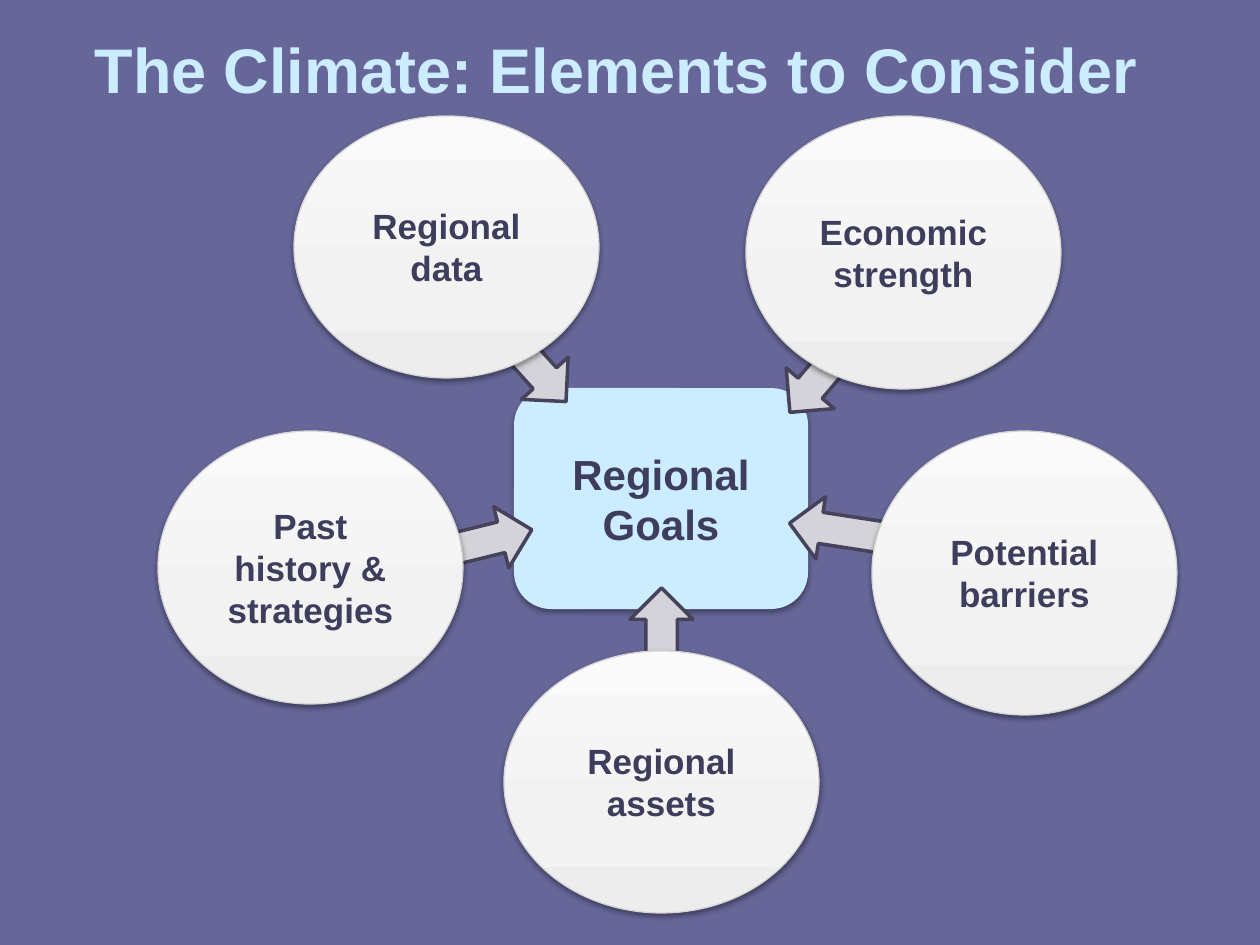
from copy import deepcopy
from dataclasses import dataclass

from lxml import etree
from pptx import Presentation
from pptx.dml.color import RGBColor
from pptx.enum.shapes import MSO_SHAPE
from pptx.enum.text import MSO_ANCHOR, PP_ALIGN
from pptx.oxml.ns import qn
from pptx.util import Emu, Pt

OVAL = MSO_SHAPE.OVAL
ROUND = MSO_SHAPE.ROUNDED_RECTANGLE
ARROW = MSO_SHAPE.LEFT_ARROW
CENTER = PP_ALIGN.CENTER
MIDDLE = MSO_ANCHOR.MIDDLE
SCALE = 914400 / 126  # EMU in one px


@dataclass(frozen=True)
class Theme:
    font: str = "Arial"
    back: str = "666699"
    light: str = "CCECFF"
    ink: str = "3E3E5C"
    arrow: str = "D3D3D9"
    edge: str = "47425B"
    rim: str = "D5D5D5"
    stops: tuple = ((0, "EDEDED"), (0.35, "F2F2F2"), (1, "FAFAFA"))
    title: int = 36
    goal: int = 24
    body: int = 20


def rgb(code):
    return RGBColor.from_string(code)


def px(*nums):
    return [Emu(round(n * SCALE)) for n in nums]


class Board:
    def __init__(self, deck, theme):
        self.theme = theme
        self.slide = deck.slides.add_slide(deck.slide_layouts[5])
        fill = self.slide.background.fill
        fill.solid()
        fill.fore_color.rgb = rgb(theme.back)

    def label(self, shape, lines, size, color):
        frame = shape.text_frame
        frame.word_wrap = True
        frame.vertical_anchor = MIDDLE
        for i, line in enumerate(lines):
            para = frame.add_paragraph() if i else frame.paragraphs[0]
            para.alignment = CENTER
            run = para.add_run()
            run.text = line
            font = run.font
            font.name, font.size, font.bold = self.theme.font, Pt(size), True
            font.color.rgb = rgb(color)

    def title(self, text, box):
        shape = self.slide.shapes.title
        shape.left, shape.top, shape.width, shape.height = px(*box)
        self.label(shape, [text], self.theme.title, self.theme.light)

    def shape(self, kind, box, fill=None, line=None, width=1):
        shape = self.slide.shapes.add_shape(kind, *px(*box))
        shape.shadow.inherit = False
        if fill:
            shape.fill.solid()
            shape.fill.fore_color.rgb = rgb(fill)
        if line:
            shape.line.color.rgb = rgb(line)
            shape.line.width = Pt(width)
        else:
            shape.line.fill.background()
        return shape

    def shade(self, shape, alpha, dist):
        effects = shape._element.spPr.find(qn("a:effectLst"))
        outer = etree.SubElement(
            effects, qn("a:outerShdw"), blurRad=str(Pt(3.1)),
            dist=str(Pt(dist)), dir="5400000", rotWithShape="0")
        black = etree.SubElement(outer, qn("a:srgbClr"), val="000000")
        etree.SubElement(black, qn("a:alpha"), val=str(alpha * 1000))

    def blend(self, shape):
        fill = shape.fill
        fill.gradient()
        fill.gradient_angle = 90
        group = next(shape._element.spPr.iter(qn("a:gsLst")))
        group.append(deepcopy(group[-1]))
        for stop, (place, color) in zip(fill.gradient_stops, self.theme.stops):
            stop.position = place
            stop.color.rgb = rgb(color)

    def goal(self, lines, box):
        shape = self.shape(ROUND, box, self.theme.light)
        self.shade(shape, 35, 1.8)
        self.label(shape, lines, self.theme.goal, self.theme.ink)

    def arrow(self, box, turn):
        shape = self.shape(ARROW, box, self.theme.arrow, self.theme.edge, 2)
        shape.rotation = turn

    def bubble(self, lines, box):
        shape = self.shape(OVAL, box, line=self.theme.rim, width=0.75)
        self.blend(shape)
        self.shade(shape, 38, 1.6)
        self.label(shape, lines, self.theme.body, self.theme.ink)


def main():
    deck = Presentation()
    deck.slide_width, deck.slide_height = px(1260, 945)
    board = Board(deck, Theme())

    # Title and central goal
    board.title("The Climate: Elements to Consider ", (0, 10, 1250, 116))
    board.goal(["Regional", "Goals"], (514, 388, 294, 221))

    # Arrows into the goal: left, top, width, turn
    for left, top, width, turn in (
        (789, 499, 96, 8.7),
        (451, 508, 82, 166.2),
        (505, 343, 73, 227.8),
        (625, 593, 73, 90),
        (777, 353, 73, 310.2),
    ):
        board.arrow((left, top, width, 63), turn)

    # Elements around the goal
    for lines, box in (
        (["Past history & strategies"], (158, 431, 305, 273)),
        (["Regional assets"], (504, 651, 315, 262)),
        (["Economic", "strength"], (746, 116, 315, 273)),
        (["Potential barriers"], (872, 431, 305, 284)),
        (["Regional", "data"], (294, 116, 305, 262)),
    ):
        board.bubble(lines, box)

    deck.save("out.pptx")


if __name__ == "__main__":
    main()
